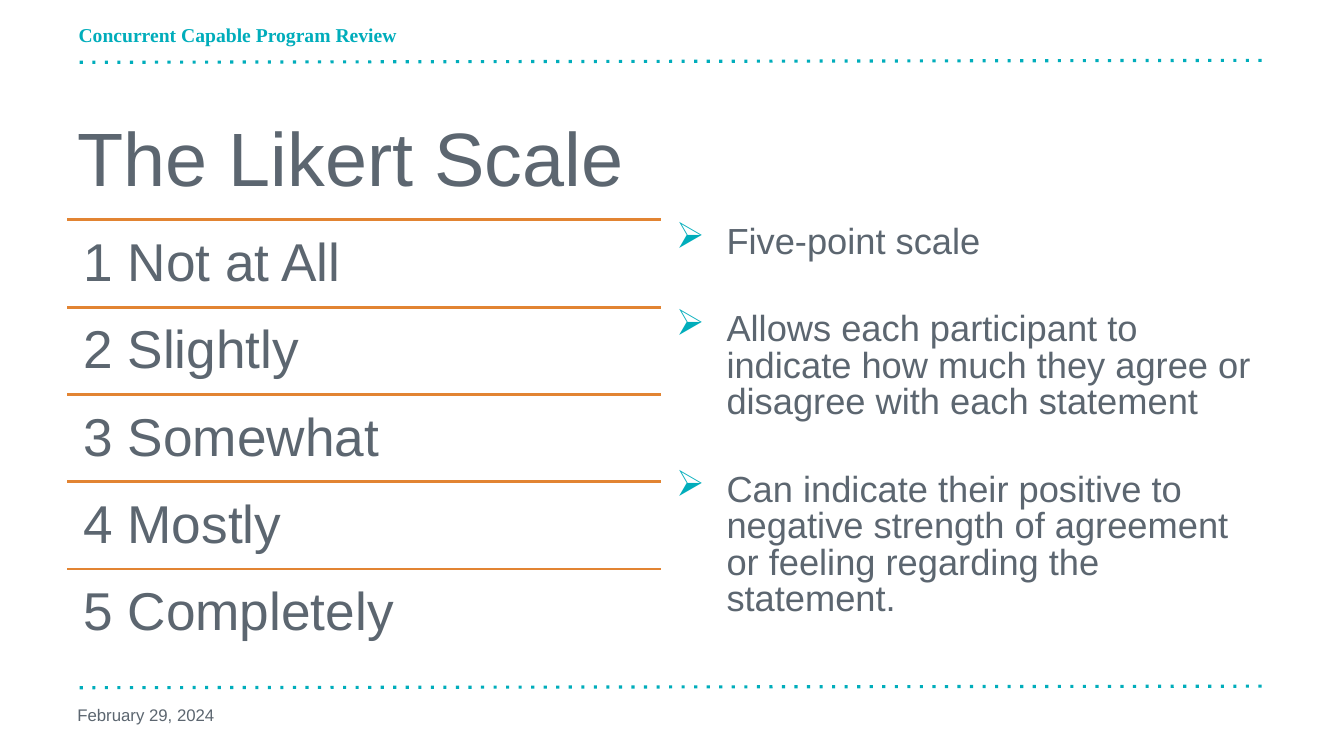
from lxml import etree
from pptx import Presentation
from pptx import util as u
from pptx.dml.color import RGBColor
from pptx.enum import shapes, text
from pptx.oxml.ns import qn

TEAL, ORANGE, GRAY = "00ADBB", "E28432", "5C6670"


def paint(target, color):
    target.rgb = RGBColor.from_string(color)


def add_rule(x1, y1, x2, y2, color, width, dash=None):
    rule = slide.shapes.add_connector(
        shapes.MSO_CONNECTOR.STRAIGHT, u.Cm(x1), u.Cm(y1), u.Cm(x2), u.Cm(y2))
    paint(rule.line.color, color)
    rule.line.width = u.Pt(width)
    properties = rule._element.spPr
    if dash:
        etree.SubElement(properties.find(qn("a:ln")), qn("a:prstDash"), val=dash)
    etree.SubElement(properties, qn("a:effectLst"))


deck = Presentation()
deck.slide_width, deck.slide_height = u.Cm(33.87), u.Cm(19.05)
slide = deck.slides.add_slide(deck.slide_layouts[5])

for start_y, end_y in ((1.57, 1.52), (17.33, 17.29)):
    add_rule(2.01, start_y, 31.88, end_y, TEAL, 2.25, "dot")

title = slide.shapes.title
title.left, title.top = u.Cm(1.7), u.Cm(2.36)
title.width, title.height = u.Cm(30.18), u.Cm(3.18)
title.text_frame.text = "The Likert Scale"
title.text_frame.auto_size = text.MSO_AUTO_SIZE.NONE
title.text_frame.vertical_anchor = text.MSO_ANCHOR.MIDDLE
heading = title.text_frame.paragraphs[0]
heading.alignment = text.PP_ALIGN.LEFT
heading.font.name, heading.font.size = "Arial", u.Pt(54)
paint(heading.font.color, GRAY)

program = slide.shapes.add_textbox(u.Cm(1.73), u.Cm(0.53), u.Cm(25.6), u.Cm(0.84))
program.text_frame.word_wrap = True
program_name = program.text_frame.paragraphs[0]
program_name.text = "Concurrent Capable Program Review"
program_name.line_spacing = 0.9
program_name.font.name, program_name.font.size = "Times New Roman", u.Pt(14)
program_name.font.bold = True
paint(program_name.font.color, TEAL)

date = slide.shapes.add_textbox(u.Cm(1.7), u.Cm(17.5), u.Cm(7.9), u.Cm(1.02))
date.text_frame.word_wrap = True
date.text_frame.vertical_anchor = text.MSO_ANCHOR.MIDDLE
review_date = date.text_frame.paragraphs[0]
review_date.text = "February 29, 2024"
review_date.font.name, review_date.font.size = "Arial", u.Pt(12)
paint(review_date.font.color, GRAY)

ratings = ("Not at All", "Slightly", "Somewhat", "Mostly", "Completely")
row_height = 2.2
for index, rating in enumerate(ratings):
    top = 5.54 + index * row_height
    add_rule(1.7, top, 16.67, top, ORANGE, 2)
    row = slide.shapes.add_textbox(u.Cm(1.7), u.Cm(top), u.Cm(14.97), u.Cm(row_height))
    frame = row.text_frame
    frame.word_wrap = True
    frame.margin_left = frame.margin_right = u.Cm(0.4)
    frame.margin_top = frame.margin_bottom = u.Cm(0.4)
    label = frame.paragraphs[0]
    label.text = f"{index + 1} {rating}"
    label.line_spacing = 0.9
    label.font.name, label.font.size = "Arial", u.Pt(38)
    paint(label.font.color, GRAY)

points = (
    "Five-point scale",
    "Allows each participant to indicate how much they agree or disagree with each statement",
    "Can indicate their positive to negative strength of agreement or feeling regarding the statement.",
)
explanation = slide.shapes.add_textbox(u.Cm(16.79), u.Cm(5.54), u.Cm(15.09), u.Cm(11))
explanation.text_frame.word_wrap = True
explanation.text_frame.text = "\n".join(points)
for index, point in enumerate(explanation.text_frame.paragraphs):
    point.line_spacing = 0.84
    point.space_before = u.Pt(36.4 if index else 0)
    point.font.name, point.font.size = "Arial", u.Pt(25.9)
    paint(point.font.color, GRAY)
    layout = point._p.get_or_add_pPr()
    layout.set("marL", str(u.Cm(1.27)))
    layout.set("indent", str(-u.Cm(1.27)))
    bullet_color = etree.Element(qn("a:buClr"))
    etree.SubElement(bullet_color, qn("a:srgbClr"), val=TEAL)
    bullet = etree.Element(qn("a:buChar"), char="➢")
    defaults = layout.find(qn("a:defRPr"))
    defaults.addprevious(bullet_color)
    defaults.addprevious(bullet)

deck.save("out.pptx")
